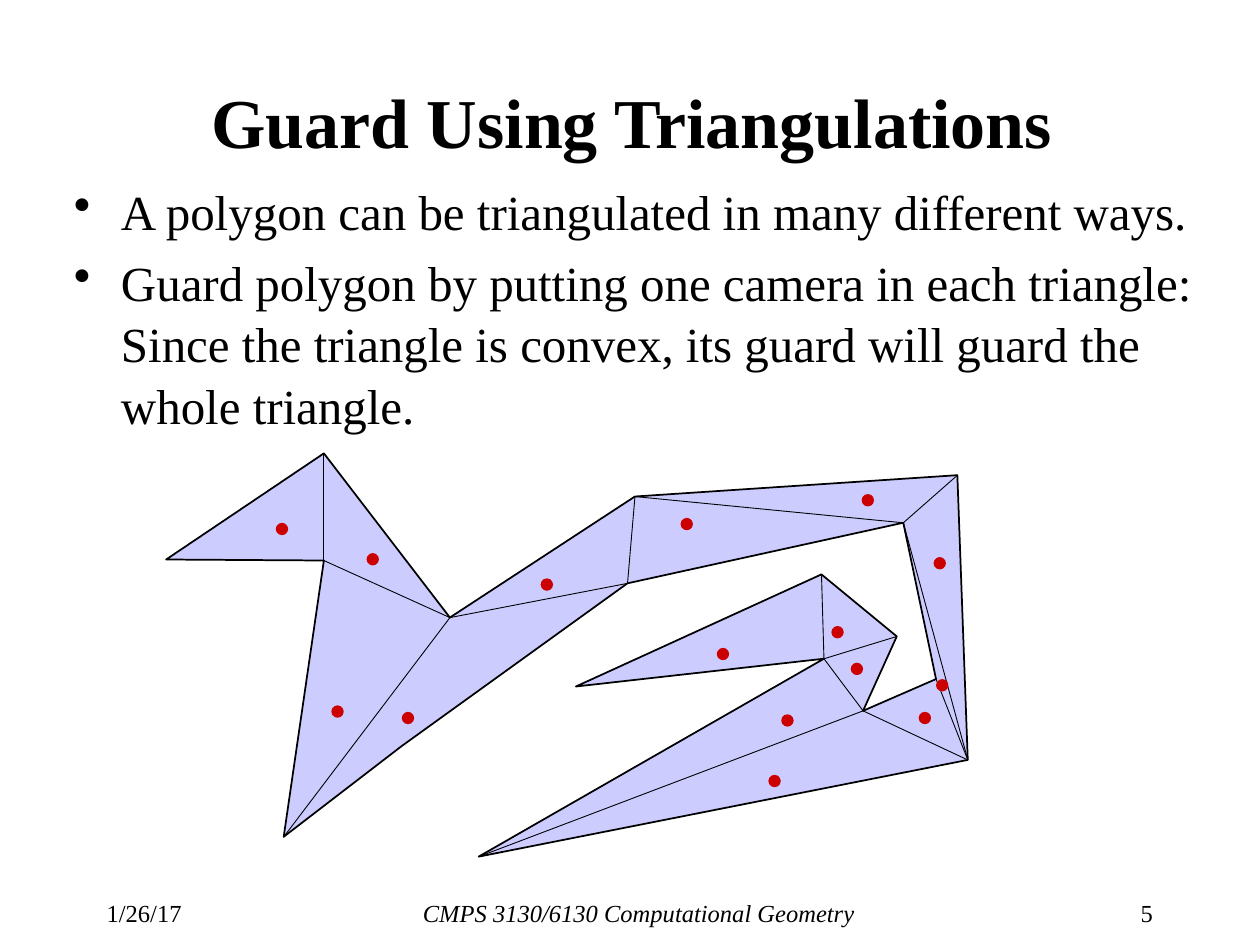
from dataclasses import dataclass

from lxml.etree import SubElement
from pptx import Presentation
from pptx.dml.color import RGBColor
from pptx.enum.shapes import MSO_CONNECTOR as Connector, MSO_SHAPE as Shape
from pptx.enum.text import MSO_ANCHOR as Anchor, PP_ALIGN as Align
from pptx.oxml.ns import qn
from pptx.util import Cm, Pt


@dataclass(frozen=True)
class Theme:
    font: str = "Times New Roman"
    ink: RGBColor = RGBColor(0x00, 0x00, 0x00)
    polygon: RGBColor = RGBColor(0xCC, 0xCC, 0xFF)
    camera: RGBColor = RGBColor(0xCC, 0x00, 0x00)
    title_size: int = 40
    body_size: int = 28
    footer_size: int = 14
    outline: float = 1
    diagonal: float = 0.5


THEME = Theme()

BULLETS = [
    "A polygon can be triangulated in many different ways.",
    "Guard polygon by putting one camera in each triangle: Since the triangle "
    "is convex, its guard will guard the whole triangle.",
]

# Polygon corners in order, in centimetres.
CORNERS = [
    (3.35, 11.28), (6.53, 9.14), (9.07, 12.45), (12.8, 10.01), (19.3, 9.58),
    (19.51, 15.32), (9.65, 17.27), (16.61, 13.28), (11.61, 13.84),
    (16.56, 11.58), (18.08, 12.83), (17.4, 14.33), (18.87, 13.69),
    (18.21, 10.54), (12.65, 11.76), (8.1, 15.04), (5.72, 16.87), (6.53, 11.3),
]

# Pairs of corner indices joined by the triangulation.
DIAGONALS = [
    (1, 17), (17, 2), (2, 16), (2, 14), (14, 3), (3, 13), (13, 4),
    (13, 5), (12, 5), (11, 5), (11, 6), (7, 11), (7, 10), (9, 7),
]

# Top left of each camera dot, in centimetres.
CAMERAS = [
    (5.56, 10.54), (7.39, 11.15), (6.68, 14.22), (8.1, 14.35), (10.9, 11.66),
    (13.72, 10.44), (17.37, 9.96), (18.82, 11.23), (18.87, 13.69),
    (18.52, 14.35), (15.49, 15.62), (15.75, 14.4), (17.15, 13.36),
    (16.76, 12.62), (14.45, 13.06),
]
CAMERA_SIZE = 0.25

FOOTER_TOP, FOOTER_HEIGHT = 17.98, 0.64


def add_text(slide, box, lines, size, align=Align.LEFT, anchor=Anchor.TOP,
             bold=False, italic=False):
    """Add a text box with one paragraph per line and return its paragraphs."""
    frame = slide.shapes.add_textbox(*map(Cm, box)).text_frame
    frame.word_wrap = True
    frame.vertical_anchor = anchor
    for index, line in enumerate(lines):
        paragraph = frame.paragraphs[0] if index == 0 else frame.add_paragraph()
        paragraph.alignment = align
        run = paragraph.add_run()
        run.text = line
        font = run.font
        font.name, font.size = THEME.font, Pt(size)
        font.bold, font.italic = bold, italic
        font.color.rgb = THEME.ink
    return frame.paragraphs


def add_bullets(slide, box, lines):
    for paragraph in add_text(slide, box, lines, THEME.body_size):
        paragraph.space_before = Pt(6)
        paragraph.line_spacing = 1.04
        properties = paragraph._p.get_or_add_pPr()
        properties.set("marL", str(Cm(0.95)))
        properties.set("indent", str(-Cm(0.95)))
        SubElement(properties, qn("a:buChar")).set("char", "•")


def add_polygon(slide, corners):
    points = [(Cm(x), Cm(y)) for x, y in corners]
    builder = slide.shapes.build_freeform(*points[0])
    builder.add_line_segments(points[1:], close=True)
    polygon = builder.convert_to_shape()
    polygon.shadow.inherit = False
    polygon.fill.solid()
    polygon.fill.fore_color.rgb = THEME.polygon
    polygon.line.color.rgb = THEME.ink
    polygon.line.width = Pt(THEME.outline)


def add_diagonal(slide, start, end):
    line = slide.shapes.add_connector(
        Connector.STRAIGHT, *map(Cm, start), *map(Cm, end))
    line.line.color.rgb = THEME.ink
    line.line.width = Pt(THEME.diagonal)
    SubElement(line._element.spPr, qn("a:effectLst"))


def add_camera(slide, left, top):
    dot = slide.shapes.add_shape(
        Shape.OVAL, Cm(left), Cm(top), Cm(CAMERA_SIZE), Cm(CAMERA_SIZE))
    dot.shadow.inherit = False
    dot.fill.solid()
    dot.fill.fore_color.rgb = THEME.camera
    dot.line.fill.background()


def add_footer(slide, left, width, text, align, italic=False):
    add_text(slide, (left, FOOTER_TOP, width, FOOTER_HEIGHT), [text],
             THEME.footer_size, align, italic=italic)


def main():
    presentation = Presentation()
    presentation.slide_width, presentation.slide_height = Cm(25.4), Cm(19.05)
    slide = presentation.slides.add_slide(presentation.slide_layouts[6])

    add_footer(slide, 1.9, 2.41, "1/26/17", Align.LEFT)
    add_footer(slide, 4.83, 16.1, "CMPS 3130/6130 Computational Geometry",
               Align.CENTER, italic=True)
    add_footer(slide, 21.41, 2.08, "5", Align.RIGHT)
    add_text(slide, (4.01, 0.84, 20.96, 3.18), ["Guard Using Triangulations"],
             THEME.title_size, anchor=Anchor.MIDDLE, bold=True)
    add_bullets(slide, (1.24, 3.48, 23.42, 5.89), BULLETS)

    add_polygon(slide, CORNERS)
    for start, end in DIAGONALS:
        add_diagonal(slide, CORNERS[start], CORNERS[end])
    for left, top in CAMERAS:
        add_camera(slide, left, top)

    presentation.save("out.pptx")


if __name__ == "__main__":
    main()
